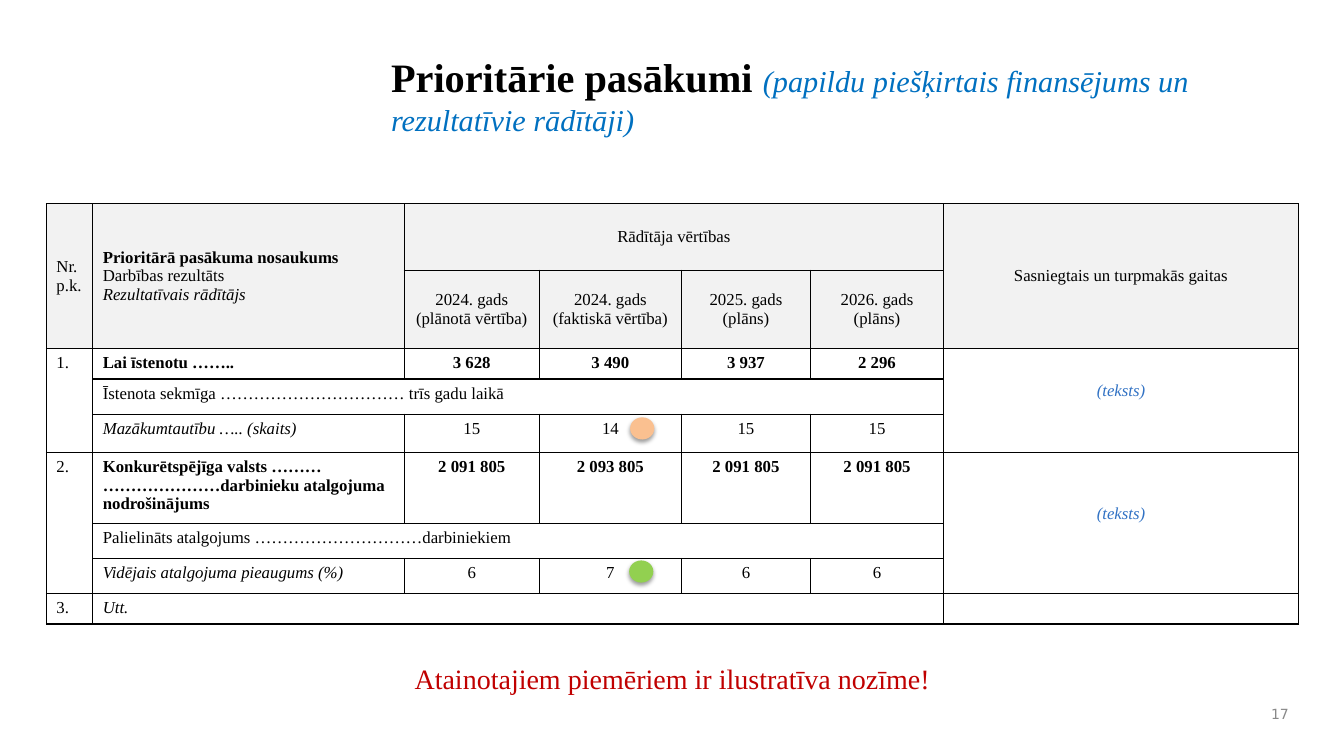
from lxml import etree
from pptx import Presentation
from pptx import util as u
from pptx.dml.color import RGBColor
from pptx.enum import shapes, text
from pptx.oxml import ns

BLACK = RGBColor(0x00, 0x00, 0x00)
TITLE_BLUE = RGBColor(0x00, 0x70, 0xC0)
NOTE_BLUE = RGBColor(0x31, 0x72, 0xC4)
RED = RGBColor(0xC0, 0x00, 0x00)
GREY = RGBColor(0x89, 0x89, 0x89)
HEADER_FILL = RGBColor(0xF2, 0xF2, 0xF2)
GREEN = RGBColor(0x92, 0xD0, 0x50)
ORANGE = RGBColor(0xFA, 0xC0, 0x90)

SERIF = "Times New Roman"
LEFT, CENTER, RIGHT = text.PP_ALIGN.LEFT, text.PP_ALIGN.CENTER, text.PP_ALIGN.RIGHT
TOP, MIDDLE = text.MSO_ANCHOR.TOP, text.MSO_ANCHOR.MIDDLE

PLAIN = {"name": SERIF, "size": 12, "color": BLACK, "bold": False, "italic": False}
BOLD = PLAIN | {"bold": True}
ITALIC = PLAIN | {"italic": True}
NOTE = ITALIC | {"color": NOTE_BLUE}

TEXT_BOXES = [
    ((3.78, 0.42, 8.89, 1.13), TOP, LEFT, 0.1, [
        ("Prioritārie pasākumi ", BOLD | {"size": 28.8}),
        ("(papildu piešķirtais finansējums un rezultatīvie rādītāji)",
         ITALIC | {"size": 21.6, "color": TITLE_BLUE}),
    ]),
    ((12.27, 6.92, 0.61, 0.33), MIDDLE, RIGHT, 0.05, [
        ("17", PLAIN | {"name": "DejaVu Sans", "size": 10, "color": GREY}),
    ]),
    ((3.7, 6.51, 5.94, 0.58), TOP, CENTER, 0.05, [
        ("Atainotajiem piemēriem ir ilustratīva nozīme!",
         PLAIN | {"size": 20, "color": RED}),
    ]),
]

TABLE_LEFT, TABLE_TOP = 0.46, 2.02
COLUMNS = [0.46, 3.09, 1.34, 1.41, 1.28, 1.32, 3.52]
ROWS = [0.66, 0.78, 0.29, 0.35, 0.38, 0.65, 0.35, 0.35, 0.29]
HEADER_ROWS = 2
HEADERS = [
    (0, 0, 2, 1, LEFT, [("Nr.p.k.", PLAIN)]),
    (0, 1, 2, 1, LEFT, [
        ("Prioritārā pasākuma nosaukums", BOLD),
        ("Darbības rezultāts", PLAIN),
        ("Rezultatīvais rādītājs", ITALIC),
    ]),
    (0, 2, 1, 4, CENTER, [("Rādītāja vērtības", PLAIN)]),
    (0, 6, 2, 1, CENTER, [("Sasniegtais un turpmakās gaitas", PLAIN)]),
]
YEARS = [
    "2024. gads (plānotā vērtība)",
    "2024. gads (faktiskā vērtība)",
    "2025. gads (plāns)",
    "2026. gads (plāns)",
]
MEASURES = [
    {
        "number": "1.",
        "name": "Lai īstenotu ……..",
        "funding": ["3 628", "3 490", "3 937", "2 296"],
        "result": "Īstenota sekmīga …………………………… trīs gadu laikā",
        "indicator": "Mazākumtautību ….. (skaits)",
        "values": ["15", "14", "15", "15"],
    },
    {
        "number": "2.",
        "name": "Konkurētspējīga valsts ……… …………………darbinieku atalgojuma nodrošinājums",
        "funding": ["2 091 805", "2 093 805", "2 091 805", "2 091 805"],
        "result": "Palielināts atalgojums …………………………darbiniekiem",
        "indicator": "Vidējais atalgojuma pieaugums (%)",
        "values": ["6", "7", "6", "6"],
    },
]
STATUS_DOTS = [(6.24, 5.56, GREEN), (6.25, 4.14, ORANGE)]


def add_run(paragraph, words, style):
    run = paragraph.add_run()
    run.text = words
    for key, value in style.items():
        if key == "color":
            run.font.color.rgb = value
        else:
            setattr(run.font, key, u.Pt(value) if key == "size" else value)


def fill_cell(table, row, column, lines, align=LEFT, anchor=TOP, span=(1, 1)):
    cell = table.cell(row, column)
    if span != (1, 1):
        cell.merge(table.cell(row + span[0] - 1, column + span[1] - 1))
    cell.vertical_anchor = anchor
    for index, (words, style) in enumerate(lines):
        frame = cell.text_frame
        paragraph = frame.add_paragraph() if index else frame.paragraphs[0]
        paragraph.alignment = align
        add_run(paragraph, words, style)
    return cell


def format_cell(cell, is_header):
    if is_header:
        cell.fill.solid()
        cell.fill.fore_color.rgb = HEADER_FILL
    else:
        cell.fill.background()
    properties = cell._tc.get_or_add_tcPr()
    for index, side in enumerate(("a:lnL", "a:lnR", "a:lnT", "a:lnB")):
        line = etree.Element(ns.qn(side), w=str(u.Pt(1)))
        fill = etree.SubElement(line, ns.qn("a:solidFill"))
        etree.SubElement(fill, ns.qn("a:srgbClr"), val=str(BLACK))
        properties.insert(index, line)
    if not cell.text_frame.text:
        cell.text_frame.paragraphs[0]._p.get_or_add_endParaRPr().set("sz", "1200")


def add_measures_table(slide):
    table = slide.shapes.add_table(
        len(ROWS), len(COLUMNS), u.Inches(TABLE_LEFT), u.Inches(TABLE_TOP),
        u.Inches(sum(COLUMNS)), u.Inches(sum(ROWS))).table
    table.first_row = table.horz_banding = False
    for column, width in zip(table.columns, COLUMNS):
        column.width = u.Inches(width)
    for row, height in zip(table.rows, ROWS):
        row.height = u.Inches(height)

    for row, column, height, width, align, lines in HEADERS:
        fill_cell(table, row, column, lines, align, MIDDLE, (height, width))
    for column, year in enumerate(YEARS, 2):
        fill_cell(table, 1, column, [(year, PLAIN)], CENTER, MIDDLE)

    for index, measure in enumerate(MEASURES):
        top = HEADER_ROWS + 3 * index
        fill_cell(table, top, 0, [(measure["number"], PLAIN)], span=(3, 1))
        fill_cell(table, top, 1, [(measure["name"], BOLD)])
        fill_cell(table, top + 1, 1, [(measure["result"], PLAIN)], span=(1, 5))
        fill_cell(table, top + 2, 1, [(measure["indicator"], ITALIC)])
        for row, key, style in ((top, "funding", BOLD), (top + 2, "values", PLAIN)):
            for column, value in enumerate(measure[key], 2):
                fill_cell(table, row, column, [(value, style)], CENTER)
        note = fill_cell(table, top, 6, [("(teksts)", NOTE)], CENTER, MIDDLE, (3, 1))
        note.margin_bottom = u.Inches(0.24)

    last = len(ROWS) - 1
    fill_cell(table, last, 0, [("3.", PLAIN)])
    fill_cell(table, last, 1, [("Utt.", ITALIC)], span=(1, 5))
    for row in range(len(ROWS)):
        for column in range(len(COLUMNS)):
            format_cell(table.cell(row, column), row < HEADER_ROWS)


def add_status_dot(slide, left, top, color):
    dot = slide.shapes.add_shape(
        shapes.MSO_SHAPE.OVAL, u.Inches(left), u.Inches(top), u.Inches(0.24), u.Inches(0.22))
    dot.fill.solid()
    dot.fill.fore_color.rgb = color
    dot.line.fill.background()
    dot.shadow.inherit = False
    effects = dot._element.spPr.find(ns.qn("a:effectLst"))
    shadow = etree.SubElement(
        effects, ns.qn("a:outerShdw"), blurRad=str(u.Pt(3.1)), dist=str(u.Pt(1.6)),
        dir="5400000", rotWithShape="0")
    shade = etree.SubElement(shadow, ns.qn("a:srgbClr"), val=str(BLACK))
    etree.SubElement(shade, ns.qn("a:alpha"), val="38000")


def main():
    presentation = Presentation()
    presentation.slide_width, presentation.slide_height = u.Inches(13.33), u.Inches(7.5)
    slide = presentation.slides.add_slide(presentation.slide_layouts[6])
    for box, anchor, align, margin_top, runs in TEXT_BOXES:
        frame = slide.shapes.add_textbox(*map(u.Inches, box)).text_frame
        frame.word_wrap = True
        frame.vertical_anchor = anchor
        frame.margin_top = u.Inches(margin_top)
        frame.paragraphs[0].alignment = align
        for words, style in runs:
            add_run(frame.paragraphs[0], words, style)
    add_measures_table(slide)
    for dot in STATUS_DOTS:
        add_status_dot(slide, *dot)
    presentation.save("out.pptx")


if __name__ == "__main__":
    main()
